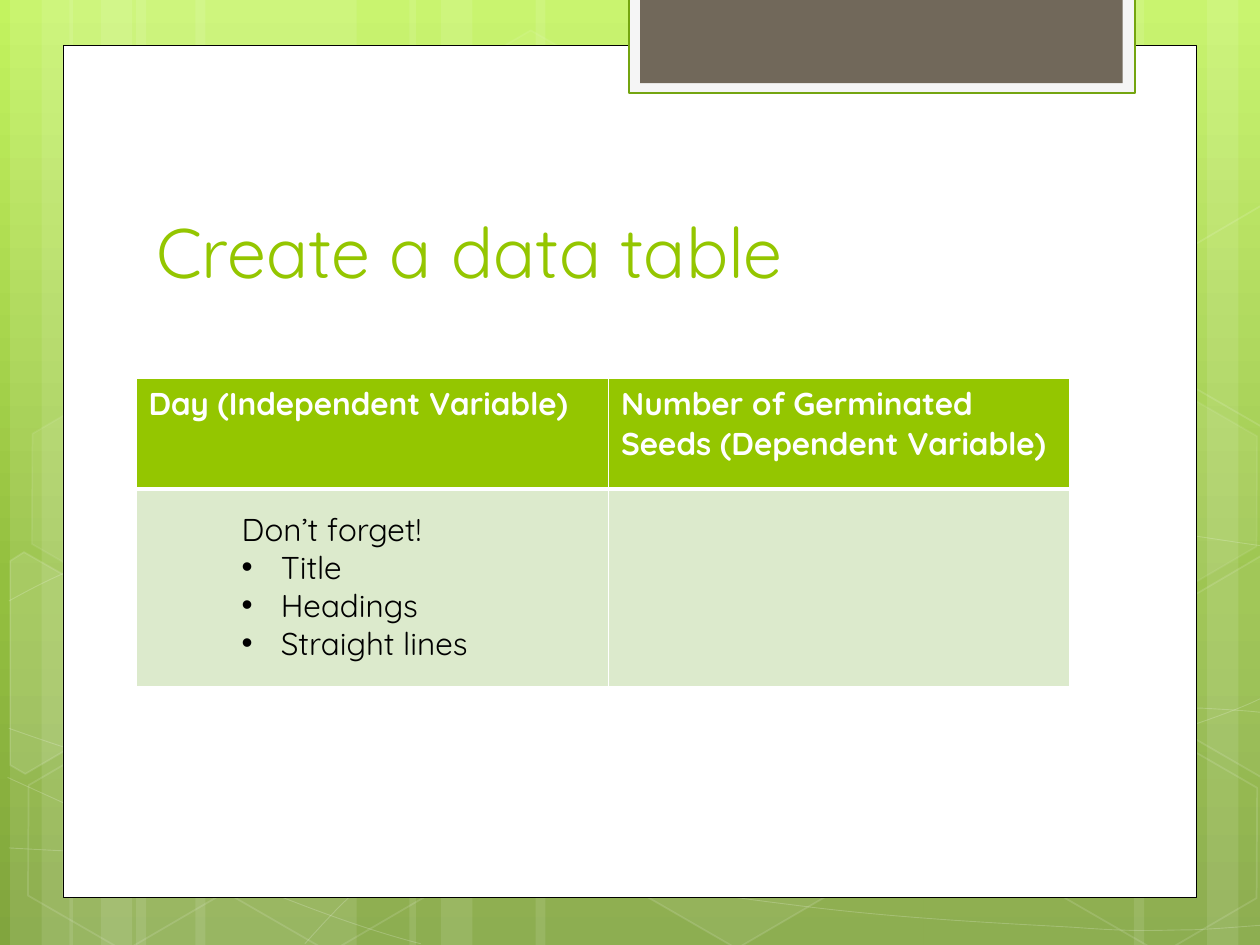
from dataclasses import dataclass
from math import cos, radians, sin

from lxml import etree
from pptx import Presentation
from pptx.dml.color import RGBColor
from pptx.enum.shapes import MSO_SHAPE
from pptx.enum.text import MSO_ANCHOR, MSO_AUTO_SIZE, PP_ALIGN
from pptx.oxml.ns import qn
from pptx.util import Inches, Pt

RECT, HEXAGON = MSO_SHAPE.RECTANGLE, MSO_SHAPE.HEXAGON
LEFT, TOP, BOTTOM = PP_ALIGN.LEFT, MSO_ANCHOR.TOP, MSO_ANCHOR.BOTTOM
NO_FIT, GROW = MSO_AUTO_SIZE.NONE, MSO_AUTO_SIZE.SHAPE_TO_FIT_TEXT
TILT = 30


@dataclass(frozen=True)
class Theme:
    font: str = "Quicksand"
    title: int = 40
    body: int = 18
    white: str = "FFFFFF"
    black: str = "000000"
    green: str = "94C600"
    pale: str = "DCEACC"
    tab: str = "F5F5F5"
    tab_line: str = "74A510"
    brown: str = "71685A"
    backdrop: tuple = ((0, "C3F35F"), (62, "93BF3F"), (100, "81A53E"))


THEME = Theme()

# Backdrop bands: left, width
BANDS = [(1.08, 1.75), (0.08, 0.5), (0.33, 0.83), (1.55, 1.75), (0.55, 0.5), (0.8, 0.83),
         (7.33, 1.75), (9.58, 0.5), (9, 0.83), (4.25, 3.08), (3.25, 0.5), (3.5, 0.83)]

# Backdrop curves: start point, then Bezier triples
CURVES = [
    [(0.07, 6.73), (0.61, 6.76), (1.15, 6.79), (1.9, 6.78), (2.65, 6.77), (3.58, 6.75),
     (4.58, 6.65), (5.58, 6.55), (7, 6.36), (7.92, 6.17), (8.83, 5.98), (9.77, 5.68),
     (10.07, 5.51)],
    [(0.07, 4.77), (0.36, 4.61), (0.65, 4.46), (1.21, 4.31), (1.78, 4.16), (2.59, 3.94),
     (3.47, 3.87), (4.36, 3.8), (5.44, 3.79), (6.54, 3.87), (7.64, 3.95), (9.47, 4.26),
     (10.07, 4.34)],
    [(0.06, 6.17), (1.27, 6.72), (2.47, 7.27), (3.34, 7.49)],
    [(0.07, 5.78), (0.38, 5.89), (0.7, 6), (1.28, 6.16), (1.86, 6.31), (2.73, 6.56),
     (3.57, 6.73), (4.4, 6.9), (5.45, 7.08), (6.28, 7.18), (7.11, 7.29), (8, 7.33),
     (8.53, 7.36), (9.05, 7.4), (9.19, 7.38), (9.45, 7.38), (9.71, 7.37), (9.89, 7.35),
     (10.07, 7.34)],
    [(2.42, 7.49), (2.6, 7.29), (2.78, 7.09), (3.02, 6.91), (3.26, 6.73), (3.6, 6.53),
     (3.88, 6.39), (4.16, 6.25), (4.33, 6.19), (4.7, 6.09), (5.06, 5.99), (5.73, 5.85),
     (6.08, 5.78), (6.44, 5.71), (6.49, 5.71), (6.8, 5.69), (7.11, 5.66), (7.6, 5.63),
     (7.94, 5.62), (8.29, 5.61), (8.86, 5.62), (8.86, 5.62), (9.08, 5.62), (9.31, 5.62),
     (9.53, 5.62), (9.71, 5.63), (9.88, 5.64), (9.97, 5.65), (10.06, 5.66), (10.03, 5.65),
     (10.06, 5.66)],
]

# Hexagons: left, top, fill opacity (None for outline only), line opacity
HEXAGONS = [(3.34, 0.36, 4, 8), (4.97, 5.89, 6, 12), (0.11, 5.91, None, 12),
            (0.14, 3.12, 7, 8), (1.74, 5.92, None, 12), (7.53, 4.53, 10, 12),
            (8.34, 5.93, None, 12), (8.34, 3.14, 7, 8)]

# Hexagons cut by the slide edge: points, centre of rotation, fill opacity
CUT_HEXAGONS = [
    ([(0.08, 4.45), (0.19, 4.38), (0.96, 4.82), (0.95, 5.7), (0.2, 6.14), (0.08, 6.07)],
     (0.36, 5.35), 10),
    ([(9.26, 4.85), (10.01, 4.41), (10.09, 4.46), (10.09, 6.13), (10.02, 6.17),
      (9.26, 5.73)], (9.85, 5.2), 4),
    ([(9.26, 2.07), (10.01, 1.63), (10.1, 1.68), (10.09, 3.35), (10.02, 3.39),
      (9.26, 2.95)], (9.85, 2.41), None),
]


def rgb(color):
    return RGBColor.from_string(color)


def set_opacity(parent, percent):
    if percent < 100:
        color = parent.find(qn("a:solidFill")).find(qn("a:srgbClr"))
        etree.SubElement(color, qn("a:alpha"), val=str(percent * 1000))


def paint(sp, fill=None, opacity=100, line=None, width=1, line_opacity=100):
    sp.shadow.inherit = False
    sp_pr = sp._element.spPr
    if fill and opacity:
        sp.fill.solid()
        sp.fill.fore_color.rgb = rgb(fill)
        set_opacity(sp_pr, opacity)
    else:
        sp.fill.background()
    if line:
        sp.line.color.rgb = rgb(line)
        sp.line.width = Pt(width)
        set_opacity(sp_pr.find(qn("a:ln")), line_opacity)
    else:
        sp.line.fill.background()


def add_shape(shapes, kind, box, **look):
    sp = shapes.add_shape(kind, *map(Inches, box))
    paint(sp, **look)
    return sp


def add_outline(shapes, points, close, **look):
    start, *rest = [(Inches(x), Inches(y)) for x, y in points]
    builder = shapes.build_freeform(*start)
    builder.add_line_segments(rest, close=close)
    sp = builder.convert_to_shape()
    paint(sp, **look)
    return sp


def bend(sp):
    """Turn each three line segments into one Bezier segment."""
    outline = sp._element.spPr.find(".//" + qn("a:path"))
    lines = outline.findall(qn("a:lnTo"))
    for i in range(0, len(lines), 3):
        curve = etree.SubElement(outline, qn("a:cubicBezTo"))
        for line in lines[i:i + 3]:
            curve.append(line[0])
            outline.remove(line)


def turn_back(points, center):
    c, d = cos(radians(TILT)), sin(radians(TILT))
    cx, cy = center
    return [(cx + (x - cx) * c + (y - cy) * d, cy - (x - cx) * d + (y - cy) * c)
            for x, y in points]


def write(p, text, color, size, bold=False):
    r = p.add_run()
    r.text = text
    fmt = {"name": THEME.font, "size": Pt(size), "bold": bold}
    for name, value in fmt.items():
        setattr(r.font, name, value)
    r.font.color.rgb = rgb(color)
    p.alignment = LEFT


def add_bullet(p, indent):
    p_pr = p._p.get_or_add_pPr()
    p_pr.set("marL", str(Inches(indent)))
    p_pr.set("indent", str(-Inches(indent)))
    etree.SubElement(p_pr, qn("a:buFont"), typeface="Arial")
    etree.SubElement(p_pr, qn("a:buChar"), char="•")


def set_border(cell, side, width):
    ln = etree.SubElement(cell._tc.get_or_add_tcPr(), qn(f"a:ln{side}"), w=str(Pt(width)))
    fill = etree.SubElement(ln, qn("a:solidFill"))
    etree.SubElement(fill, qn("a:srgbClr"), val=THEME.white)


def add_background(s):
    fill = s.background.fill
    fill.gradient()
    fill.gradient_angle = 270
    stops = s.background._cSld.find(".//" + qn("a:gsLst"))
    for stop in list(stops):
        stops.remove(stop)
    for position, color in THEME.backdrop:
        stop = etree.SubElement(stops, qn("a:gs"), pos=str(position * 1000))
        etree.SubElement(stop, qn("a:srgbClr"), val=color)


def add_backdrop(s):
    group, white = s.shapes.add_group_shape(), THEME.white
    shapes = group.shapes
    for left, width in BANDS:
        add_shape(shapes, RECT, (left, 0, width, 7.5), fill=white, opacity=10)
    for nodes in CURVES:
        bend(add_outline(shapes, nodes, False, line=white, width=0.5, line_opacity=20))
    for left, top, opacity, line_opacity in HEXAGONS:
        sp = add_shape(shapes, HEXAGON, (left, top, 1.75, 1.52), fill=white, opacity=opacity,
                       line=white, line_opacity=line_opacity)
        sp.adjustments[0], sp.adjustments[1] = 0.285, 1.155
        sp.rotation = TILT
    for points, center, opacity in CUT_HEXAGONS:
        sp = add_outline(shapes, turn_back(points, center), True, fill=white,
                         opacity=opacity, line=white, line_opacity=12)
        sp.rotation = TILT
    return group


def add_card(s):
    return [
        add_shape(s.shapes, RECT, (0.5, 0.36, 9, 6.76),
                  fill=THEME.white, line=THEME.black, width=0.5),
        add_shape(s.shapes, RECT, (4.99, -0.02, 4.02, 0.76),
                  fill=THEME.tab, line=THEME.tab_line, width=1.25),
        add_shape(s.shapes, RECT, (5.08, -0.02, 3.83, 0.68), fill=THEME.brown),
    ]


def move_to_master(prs, parts):
    tree = prs.slide_master.shapes._spTree
    for i, sp in enumerate(parts, start=2):  # behind the placeholders
        tree.insert(i, sp._element)


def add_title(s, text):
    sp = s.shapes.title
    box = dict(zip(("left", "top", "width", "height"), map(Inches, (1.14, 1.12, 7.68, 1.25))))
    for name, value in box.items():
        setattr(sp, name, value)
    tf = sp.text_frame
    for name, value in {"vertical_anchor": BOTTOM, "auto_size": NO_FIT, "word_wrap": True}.items():
        setattr(tf, name, value)
    write(tf.paragraphs[0], text, THEME.green, THEME.title)


def add_data_table(s, headings):
    table = s.shapes.add_table(2, 2, *map(Inches, (1.08, 3, 7.41, 2.45))).table
    for col, width in zip(table.columns, (3.75, 3.66)):
        col.width = Inches(width)
    for row, height, fill, bottom, top in zip(table.rows, (0.88, 1.57),
                                              (THEME.green, THEME.pale), (3, 1), (1, 3)):
        row.height = Inches(height)
        for cell in row.cells:
            for side, width in {"L": 1, "R": 1, "T": top, "B": bottom}.items():
                set_border(cell, side, width)
            cell.fill.solid()
            cell.fill.fore_color.rgb = rgb(fill)
            cell.vertical_anchor = TOP
    for cell, text in zip(table.rows[0].cells, headings):
        write(cell.text_frame.paragraphs[0], text, THEME.white, THEME.body, bold=True)


def add_reminder(s, heading, items):
    tf = s.shapes.add_textbox(*map(Inches, (1.82, 4, 5.58, 1.31))).text_frame
    tf.word_wrap = True
    tf.auto_size = GROW
    write(tf.paragraphs[0], heading, THEME.black, THEME.body)
    for item in items:
        p = tf.add_paragraph()
        write(p, item, THEME.black, THEME.body)
        add_bullet(p, 0.31)


def main():
    prs = Presentation()
    prs.slide_width, prs.slide_height = Inches(10), Inches(7.5)
    s = prs.slides.add_slide(prs.slide_layouts[5])
    add_background(s)
    move_to_master(prs, [add_backdrop(s), *add_card(s)])
    add_title(s, "Create a data table")
    add_data_table(s, ["Day (Independent Variable)",
                       "Number of Germinated Seeds (Dependent Variable)"])
    add_reminder(s, "Don’t forget!", ["Title", "Headings", "Straight lines"])
    prs.save("out.pptx")


if __name__ == "__main__":
    main()
